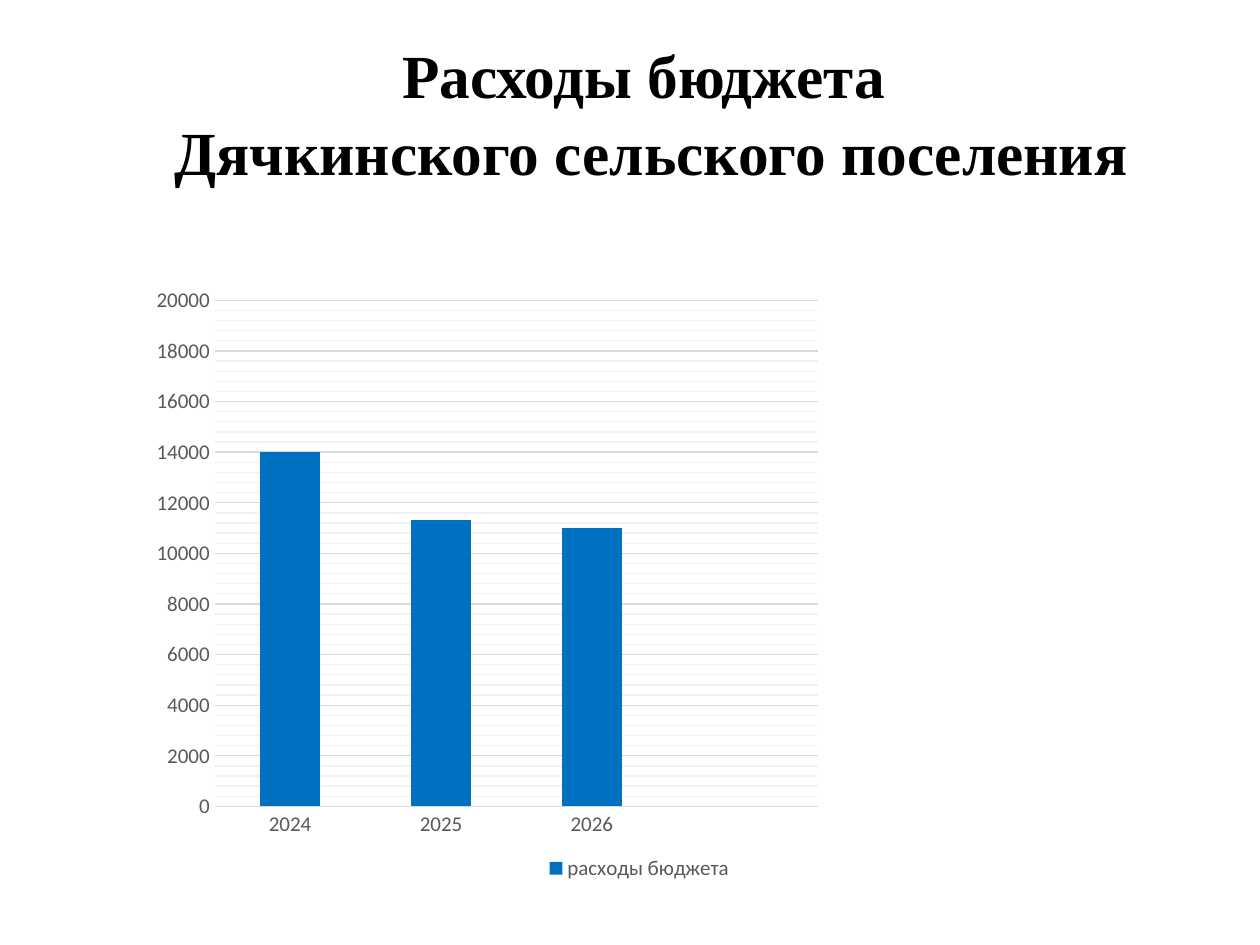
import pptx
import pptx.chart.data
import pptx.dml.color
import pptx.enum.chart
import pptx.enum.text
import pptx.oxml
import pptx.oxml.ns
import pptx.util

Pt = pptx.util.Pt
COLORS = {"title": "000000", "bar": "0070C0", "label": "595959",
          "major": "D9D9D9", "minor": "F2F2F2"}


def color(name):
    return pptx.dml.color.RGBColor.from_string(COLORS[name])


def set_format(target, values):
    for name, value in values.items():
        setattr(target, name, value)


presentation = pptx.Presentation()
presentation.slide_width, presentation.slide_height = Pt(720), Pt(540)
slide = presentation.slides.add_slide(presentation.slide_layouts[6])

# Title
title = slide.shapes.add_textbox(Pt(48.24), Pt(18), Pt(648), Pt(90))
frame = title.text_frame
set_format(frame, {"word_wrap": True,
                   "vertical_anchor": pptx.enum.text.MSO_ANCHOR.MIDDLE})
frame.text = "Расходы бюджета \nДячкинского сельского поселения"
for paragraph in frame.paragraphs:
    set_format(paragraph, {"alignment": pptx.enum.text.PP_ALIGN.CENTER,
                           "line_spacing": 1.05})
    for run in paragraph.runs:
        set_format(run.font, {"name": "Times New Roman", "size": Pt(35), "bold": True})
        run.font.color.rgb = color("title")

# Budget chart
data = pptx.chart.data.CategoryChartData()
data.categories = ["2024", "2025", "2026", ""]
data.add_series("расходы бюджета", [14000, 11300, 11000, None])
chart = slide.shapes.add_chart(
    pptx.enum.chart.XL_CHART_TYPE.COLUMN_CLUSTERED,
    Pt(46.08), Pt(157.68), Pt(638.64), Pt(348.48), data).chart
set_format(chart, {"has_title": False, "has_legend": True})
set_format(chart.font, {"name": "Calibri", "size": Pt(10)})
set_format(chart.legend, {"position": pptx.enum.chart.XL_LEGEND_POSITION.BOTTOM,
                          "include_in_layout": False})

# Bars
plot = chart.plots[0]
set_format(plot, {"gap_width": 150, "vary_by_categories": False})
series = plot.series[0]
series.invert_if_negative = False
series.format.fill.solid()
series.format.fill.fore_color.rgb = color("bar")

# Axes and gridlines
value_axis = chart.value_axis
set_format(value_axis, {"minimum_scale": 0, "maximum_scale": 20000, "major_unit": 2000,
                        "minor_unit": 400, "has_major_gridlines": True,
                        "has_minor_gridlines": True})
set_format(value_axis.tick_labels, {"number_format": "General",
                                    "number_format_is_linked": False})
for axis in (chart.category_axis, value_axis):
    set_format(axis, {"major_tick_mark": pptx.enum.chart.XL_TICK_MARK.NONE,
                      "minor_tick_mark": pptx.enum.chart.XL_TICK_MARK.NONE})
    axis.format.line.fill.background()
for font in (chart.category_axis.tick_labels.font, value_axis.tick_labels.font,
             chart.legend.font):
    set_format(font, {"name": "Calibri", "size": Pt(12)})
    font.color.rgb = color("label")

plot_area = chart.element.chart.plotArea
for name in ("major", "minor"):
    gridlines = plot_area.find(
        f'{pptx.oxml.ns.qn("c:valAx")}/{pptx.oxml.ns.qn(f"c:{name}Gridlines")}')
    gridlines.append(pptx.oxml.parse_xml(
        f'<c:spPr {pptx.oxml.ns.nsdecls("c", "a")}><a:ln w="{Pt(0.75)}"><a:solidFill>'
        f'<a:srgbClr val="{COLORS[name]}"/></a:solidFill></a:ln></c:spPr>'))

# Plot area within the chart
for layout in plot_area.findall(pptx.oxml.ns.qn("c:layout")):
    plot_area.remove(layout)
settings = {"layoutTarget": "inner", "xMode": "edge", "yMode": "edge",
            "x": 0.12, "y": 0.04, "w": 0.54, "h": 0.83}
children = "".join(f'<c:{tag} val="{value}"/>' for tag, value in settings.items())
plot_area.insert(0, pptx.oxml.parse_xml(
    f'<c:layout {pptx.oxml.ns.nsdecls("c")}><c:manualLayout>{children}'
    '</c:manualLayout></c:layout>'))

presentation.save("out.pptx")
